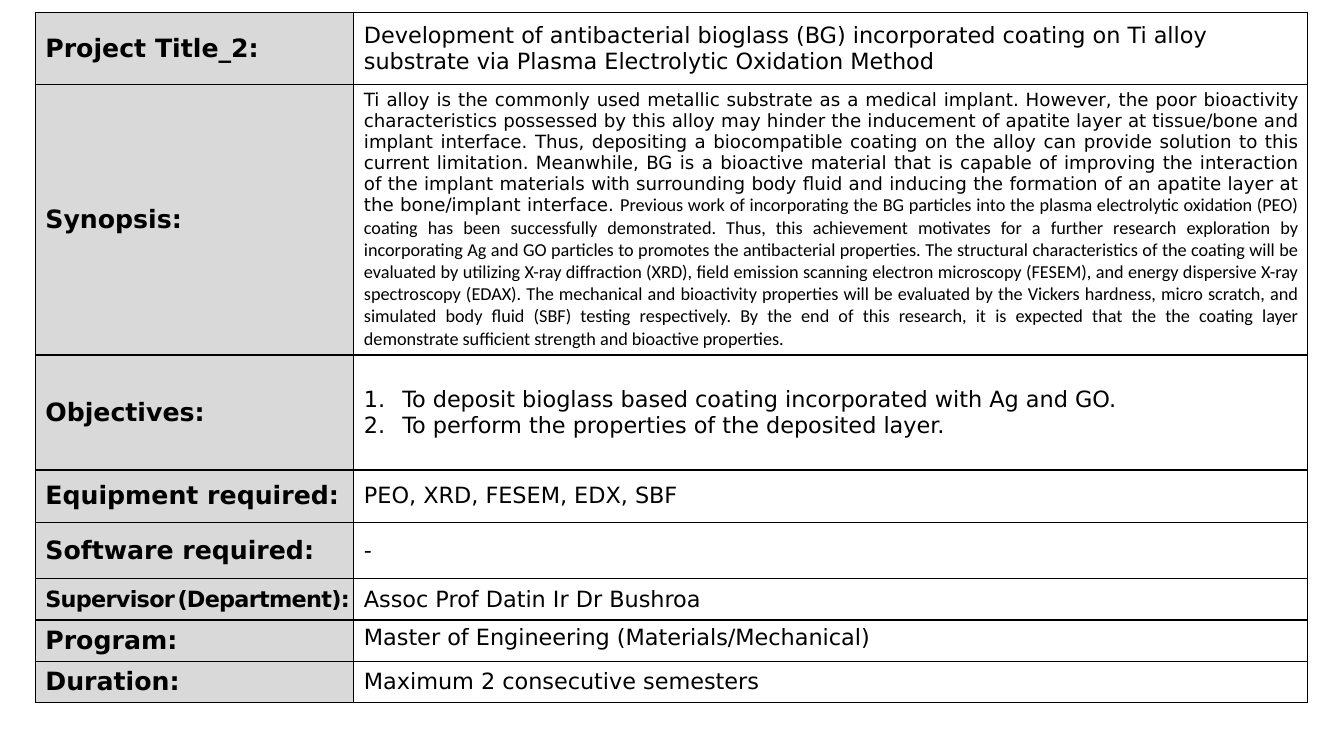
from lxml.etree import SubElement
from pptx import Presentation
from pptx.dml.color import RGBColor
from pptx.enum.text import MSO_ANCHOR, PP_ALIGN
from pptx.oxml import parse_xml
from pptx.oxml.ns import nsdecls, qn
from pptx.util import Inches, Pt

COLORS = {"label": "D9D9D9", "value": "FFFFFF", "ink": "000000"}
FONT = "DejaVu Sans"

SYNOPSIS = (
    "Ti alloy is the commonly used metallic substrate as a medical implant. However, the poor "
    "bioactivity characteristics possessed by this alloy may hinder the inducement of apatite "
    "layer at tissue/bone and implant interface. Thus, depositing a biocompatible coating on the "
    "alloy can provide solution to this current limitation. Meanwhile, BG is a bioactive material "
    "that is capable of improving the interaction of the implant materials with surrounding body "
    "fluid and inducing the formation of an apatite layer at the bone/implant interface. "
)
PREVIOUS_WORK = (
    "Previous work of incorporating the BG particles into the plasma electrolytic oxidation (PEO) "
    "coating has been successfully demonstrated. Thus, this achievement motivates for a further "
    "research exploration by incorporating Ag and GO particles to promotes the antibacterial "
    "properties. The structural characteristics of the coating will be evaluated by utilizing "
    "X-ray diffraction (XRD), field emission scanning electron microscopy (FESEM), and energy "
    "dispersive X-ray spectroscopy (EDAX). The mechanical and bioactivity properties will be "
    "evaluated by the Vickers hardness, micro scratch, and simulated body fluid (SBF) testing "
    "respectively. By the end of this research, it is expected that the the coating layer "
    "demonstrate sufficient strength and bioactive properties. "
)

# Row height, label, value paragraphs
ROWS = [
    (0.72, "Project Title_2:", ["Development of antibacterial bioglass (BG) incorporated coating on "
                                "Ti alloy substrate via Plasma Electrolytic Oxidation Method"]),
    (2.66, "Synopsis:", [SYNOPSIS]),
    (1.14, "Objectives:", ["To deposit bioglass based coating incorporated with Ag and GO.",
                           "To perform the properties of the deposited layer."]),
    (0.52, "Equipment required:", ["PEO, XRD, FESEM, EDX, SBF"]),
    (0.56, "Software required:", ["-"]),
    (0.41, "Supervisor", ["Assoc Prof Datin Ir Dr Bushroa"]),
    (0.41, "Program:", ["Master of Engineering (Materials/Mechanical)"]),
    (0.41, "Duration:", ["Maximum 2 consecutive semesters"]),
]


def style_cell(cell, fill):
    cell.fill.solid()
    cell.fill.fore_color.rgb = RGBColor.from_string(COLORS[fill])
    cell.vertical_anchor = MSO_ANCHOR.MIDDLE
    properties = cell._tc.get_or_add_tcPr()
    for position, side in enumerate(("lnL", "lnR", "lnT", "lnB")):
        properties.insert(position, parse_xml(
            f'<a:{side} {nsdecls("a")} w="{Pt(1)}"><a:solidFill>'
            f'<a:srgbClr val="{COLORS["ink"]}"/></a:solidFill></a:{side}>'))


def write_cell(cell, lines, size, bold):
    cell.text = "\n".join(lines)
    for para in cell.text_frame.paragraphs:
        para.font.name = FONT
        para.font.size = Pt(size)
        para.font.bold = bold
        para.font.color.rgb = RGBColor.from_string(COLORS["ink"])
        for span in para.runs:
            span.font.name = FONT
            span.font.size = Pt(size)
            span.font.bold = bold
            span.font.color.rgb = RGBColor.from_string(COLORS["ink"])


deck = Presentation()
deck.slide_width, deck.slide_height = Inches(13.33), Inches(7.5)
page = deck.slides.add_slide(deck.slide_layouts[6])

# Project table
table = page.shapes.add_table(len(ROWS), 2, Inches(0.35), Inches(0.12),
                              Inches(12.62), Inches(6.83)).table
table.first_row = table.horz_banding = False
table.columns[0].width, table.columns[1].width = Inches(3.16), Inches(9.46)
cells = {}
for index, (height, label, lines) in enumerate(ROWS):
    table.rows[index].height = Inches(height)
    label_cell, value_cell = table.cell(index, 0), table.cell(index, 1)
    style_cell(label_cell, "label")
    style_cell(value_cell, "value")
    write_cell(label_cell, [label], 18, True)
    write_cell(value_cell, lines, 13 if label == "Synopsis:" else 16, False)
    cells[label] = label_cell, value_cell

# Synopsis: justified, second half in Calibri
para = cells["Synopsis:"][1].text_frame.paragraphs[0]
para.alignment = PP_ALIGN.JUSTIFY
span = para.add_run()
span.text = PREVIOUS_WORK
span.font.name = "Calibri"
span.font.size = Pt(13)
span.font.bold = False
span.font.color.rgb = RGBColor.from_string(COLORS["ink"])

# Objectives: numbered list
for para in cells["Objectives:"][1].text_frame.paragraphs:
    properties = para._p.get_or_add_pPr()
    properties.set("marL", str(Inches(0.38)))
    properties.set("indent", str(-Inches(0.38)))
    numbering = SubElement(properties, qn("a:buAutoNum"), type="arabicPeriod")
    properties.insert(0, numbering)

# Supervisor: label condensed to fit on one line
supervisor = cells["Supervisor"][0]
supervisor.margin_right = 0
para = supervisor.text_frame.paragraphs[0]
for text in (" ", "(Department):"):
    para.add_run().text = text
for span, size in zip(para.runs, (16, 5, 16)):
    span.font.name = FONT
    span.font.size = Pt(size)
    span.font.bold = True
    span.font.color.rgb = RGBColor.from_string(COLORS["ink"])
    span._r.get_or_add_rPr().set("spc", "-50")

# Program value sits at the top of its cell
cells["Program:"][1].vertical_anchor = MSO_ANCHOR.TOP

deck.save("out.pptx")
